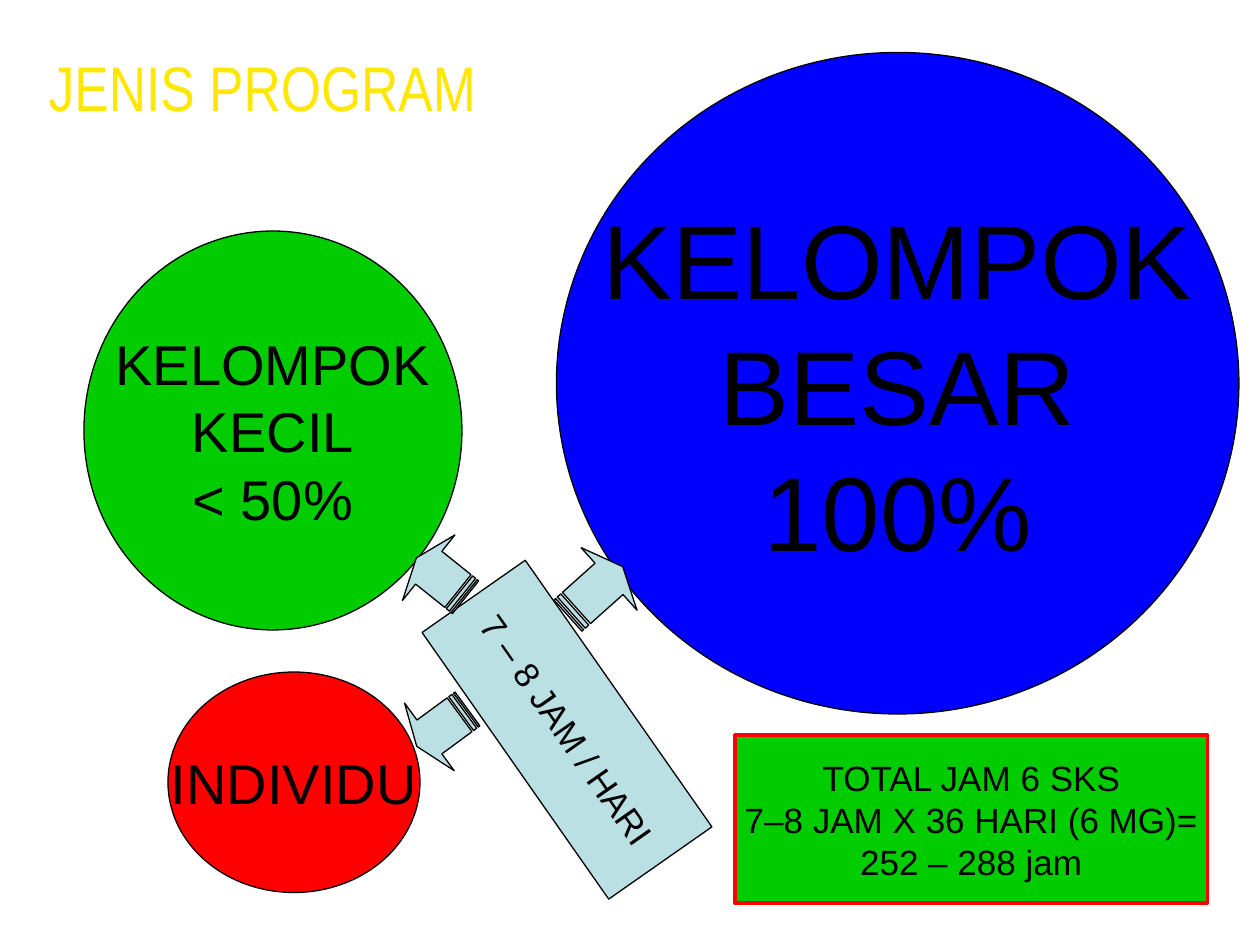
from dataclasses import dataclass

from pptx import Presentation
from pptx.dml.color import RGBColor
from pptx.enum.shapes import MSO_SHAPE as Shape
from pptx.enum.text import MSO_ANCHOR as Anchor, PP_ALIGN as Align
from pptx.util import Inches, Pt

COLS, ROWS = 120, 90
BLACK = RGBColor(0x00, 0x00, 0x00)
GREEN = RGBColor(0x00, 0xCC, 0x00)
BLUE = RGBColor(0x00, 0x00, 0xFF)
RED = RGBColor(0xFF, 0x00, 0x00)
PALE = RGBColor(0xBB, 0xE0, 0xE3)
YELLOW = RGBColor(0xFF, 0xE7, 0x01)
ORANGE = RGBColor(0xFE, 0x3E, 0x02)


@dataclass(frozen=True)
class Box:
    col: float
    row: float
    cols: float
    rows: float


@dataclass(frozen=True)
class Figure:
    kind: Shape
    box: Box
    fill: RGBColor
    lines: tuple[str, ...] = ()
    size: int = 20
    rotation: float = 0
    line: RGBColor = BLACK
    weight: float = 0.75


FIGURES = (
    Figure(Shape.OVAL, Box(8, 22, 36, 38), GREEN,
           ("KELOMPOK", "KECIL", "< 50%"), 32),
    Figure(Shape.OVAL, Box(53, 5, 65, 63), BLUE,
           ("KELOMPOK", "BESAR", "100%"), 60),
    Figure(Shape.RECTANGLE, Box(38.5, 63.5, 31, 12), PALE,
           ("7 – 8 JAM / HARI",), rotation=55),
    Figure(Shape.OVAL, Box(16, 64, 24, 21), RED, ("INDIVIDU",), 32),
    Figure(Shape.STRIPED_RIGHT_ARROW, Box(39.1, 65.3, 6, 8), PALE, rotation=143.7),
    Figure(Shape.STRIPED_RIGHT_ARROW, Box(53.2, 52.3, 7, 8), PALE, rotation=318.2),
    Figure(Shape.STRIPED_RIGHT_ARROW, Box(39, 51, 6, 8), PALE, rotation=218.7),
    Figure(Shape.RECTANGLE, Box(70, 70, 45, 16), GREEN,
           ("TOTAL JAM 6 SKS", "7–8 JAM X 36 HARI (6 MG)=", "252 – 288 jam"),
           line=RED, weight=2.25),
)


def place(prs, box: Box) -> tuple[int, int, int, int]:
    w, h = prs.slide_width / COLS, prs.slide_height / ROWS
    return (round(box.col * w), round(box.row * h),
            round(box.cols * w), round(box.rows * h))


def write(tf, lines: tuple[str, ...], anchor: Anchor, font: dict) -> None:
    tf.word_wrap = False
    tf.vertical_anchor = anchor
    for i, line in enumerate(lines):
        p = tf.paragraphs[0] if i == 0 else tf.add_paragraph()
        p.alignment = Align.CENTER
        r = p.add_run()
        r.text = line
        for name, value in font.items():
            setattr(r.font, name, value)


def draw_title(prs, s) -> None:
    tf = s.shapes.add_textbox(*place(prs, Box(3, 4, 44, 17))).text_frame
    write(tf, ("JENIS PROGRAM",), Anchor.TOP, {"name": "Arial Narrow", "size": Pt(36)})
    fill = tf.paragraphs[0].runs[0].font.fill
    fill.gradient()
    fill.gradient_angle = 270
    for stop, color in zip(fill.gradient_stops, (YELLOW, ORANGE)):
        stop.color.rgb = color


def draw_figure(prs, s, figure: Figure) -> None:
    sp = s.shapes.add_shape(figure.kind, *place(prs, figure.box))
    sp.rotation = figure.rotation
    sp.shadow.inherit = False
    sp.fill.solid()
    sp.fill.fore_color.rgb = figure.fill
    sp.line.color.rgb = figure.line
    sp.line.width = Pt(figure.weight)
    if figure.kind == Shape.STRIPED_RIGHT_ARROW:
        sp.adjustments[0], sp.adjustments[1] = 0.5, 0.25
    if figure.lines:
        write(sp.text_frame, figure.lines, Anchor.MIDDLE,
              {"name": "Arial", "size": Pt(figure.size)})
        for p in sp.text_frame.paragraphs:
            p.runs[0].font.color.rgb = BLACK


def main() -> None:
    prs = Presentation()
    prs.slide_width, prs.slide_height = Inches(10), Inches(7.5)
    s = prs.slides.add_slide(prs.slide_layouts[6])
    draw_title(prs, s)
    for figure in FIGURES:
        draw_figure(prs, s, figure)
    prs.save("out.pptx")


if __name__ == "__main__":
    main()
